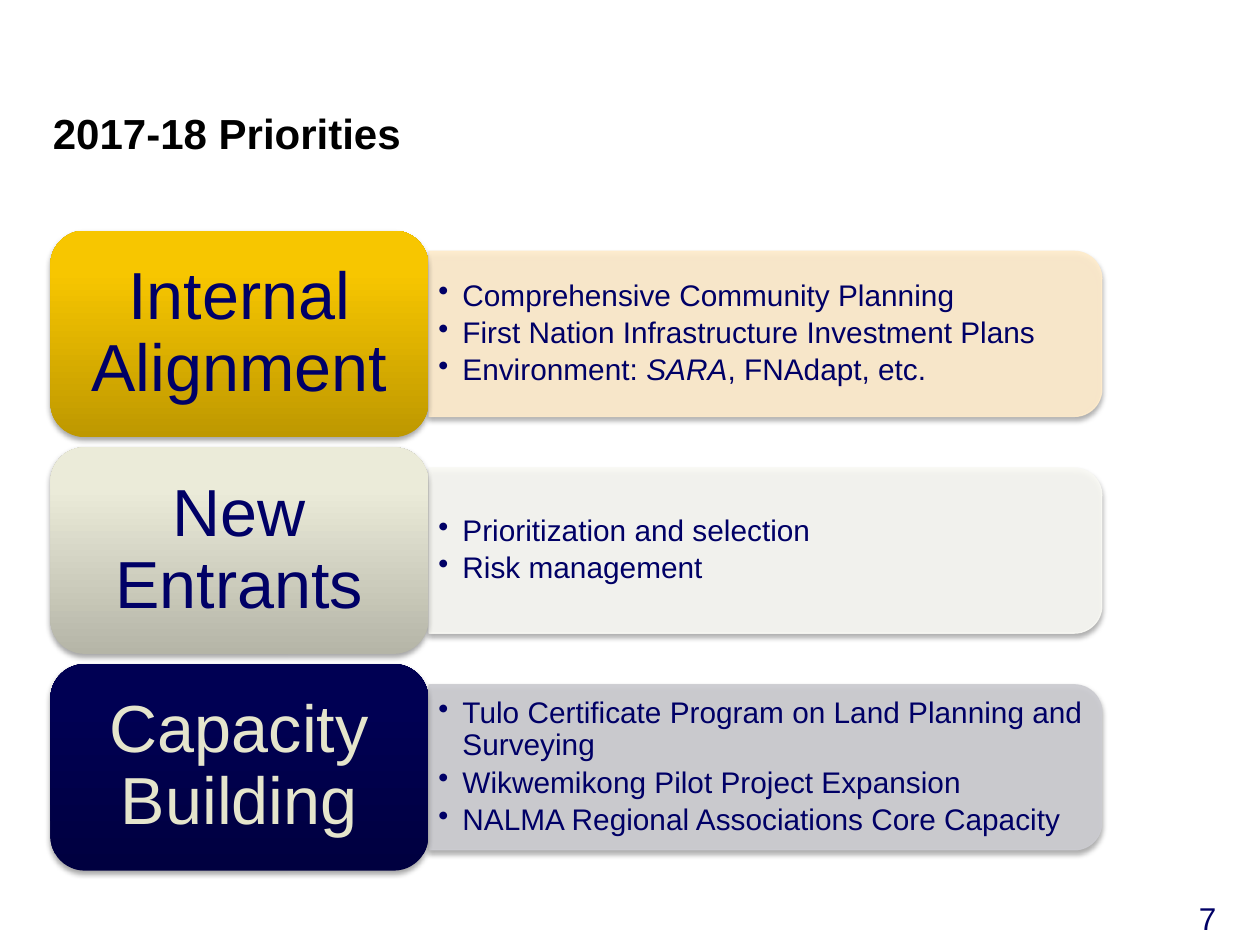
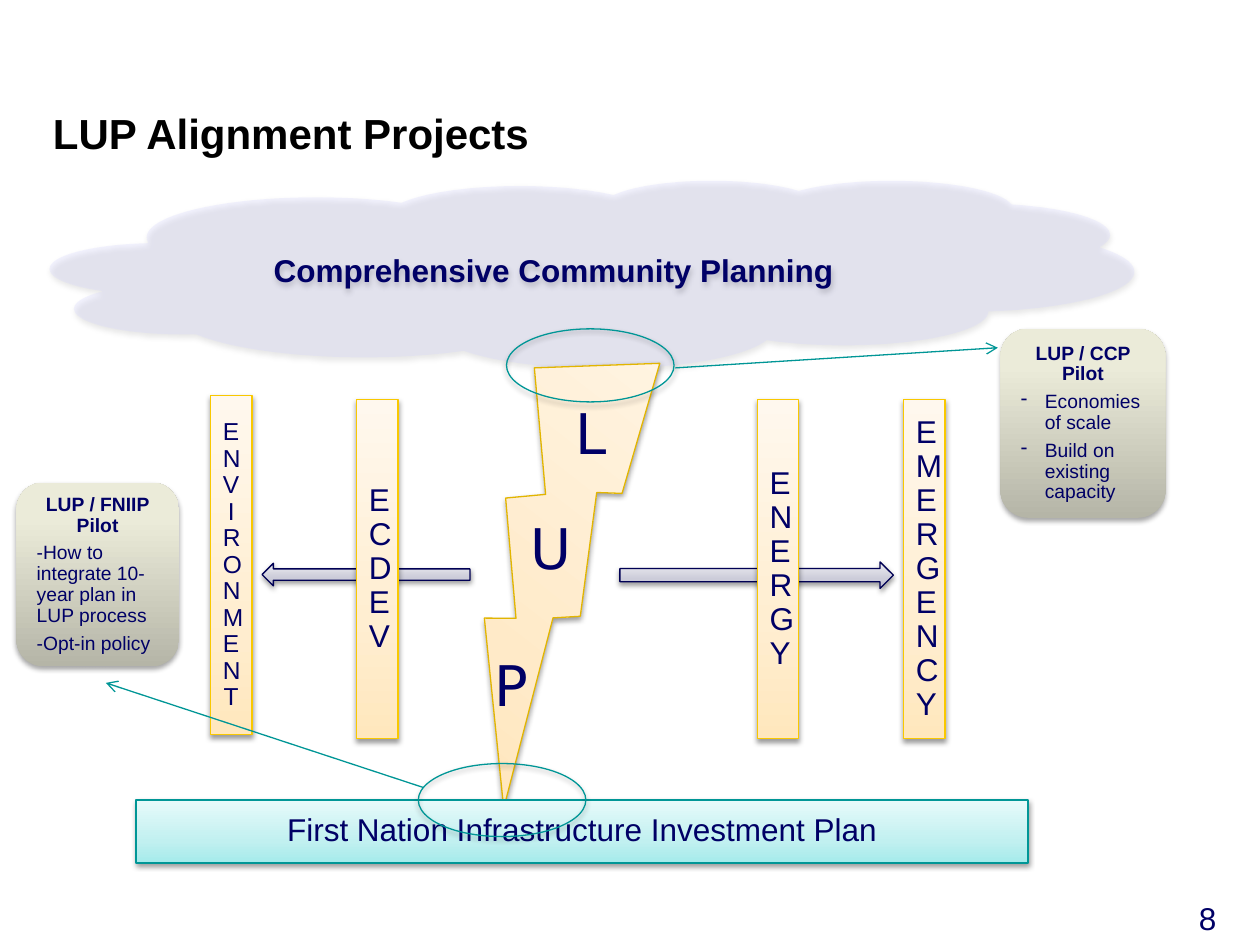
import pptx
import pptx.dml.color
import pptx.enum.shapes
import pptx.enum.text
import pptx.oxml.ns
import pptx.util
import lxml.etree

Inches = pptx.util.Inches
Pt = pptx.util.Pt
Shape = pptx.enum.shapes.MSO_SHAPE
Align = pptx.enum.text.PP_ALIGN
Anchor = pptx.enum.text.MSO_ANCHOR
qn = pptx.oxml.ns.qn

NAVY = "000066"
TEAL = "009696"
SAND = [(0, "B5B5A7"), (80, "EBEBD9"), (100, "ECECDA")]
GOLD = [(0, "BE9800"), (80, "F7C600"), (100, "F8C700")]
MIDNIGHT = [(0, "000040"), (80, "000053"), (100, "000054")]
LAVENDER = [(0, "B6B6CA"), (35, "CCCCD9"), (100, "ECECF1")]
PEACH = [(0, "FFE3B1"), (35, "FFEAC8"), (100, "FFF7EA")]
CREAM = [(0, "FFE7BD"), (35, "FFEED1"), (100, "FFF8EE")]
AQUA = [(0, "A5EBEB"), (35, "C1F0F0"), (100, "E7FAFA")]
SOFT_SHADOW = (35, 1.8)
FIRM_SHADOW = (38, 1.6)


def rgb(value):
    return pptx.dml.color.RGBColor.from_string(value)


def assign(target, values):
    for name, value in values.items():
        setattr(target, name, value)


def add_element(parent, tag, **attributes):
    element = lxml.etree.SubElement(parent, qn(tag))
    for name, value in attributes.items():
        element.set(name, str(value))
    return element


class Builder:
    font = {"name": "Arial", "size": 18, "color": NAVY, "bold": False, "italic": False}

    def __init__(self):
        self.deck = pptx.Presentation()
        assign(self.deck, {"slide_width": Inches(10), "slide_height": Inches(7.5)})
        self.page = None

    def add_page(self, title, number):
        self.page = self.deck.slides.add_slide(self.deck.slide_layouts[5])
        box = self.page.shapes.title
        places = zip(("left", "top", "width", "height"), (0.42, 0.92, 8.58, 0.33))
        assign(box, {name: Inches(value) for name, value in places})
        self.fill_text(box, [title], {"size": 24, "color": "000000", "bold": True},
                       {"line_spacing": Pt(24), "alignment": Align.LEFT}, insets=(0, 0))
        self.text((9.17, 7.12, 0.83, 0.33), [str(number)], {},
                  {"alignment": Align.CENTER}, anchor=Anchor.TOP)

    def fill_text(self, box, lines, font=None, layout=None, anchor=Anchor.MIDDLE,
                  insets=(0.1, 0.05)):
        frame = box.text_frame
        across, down = map(Inches, insets)
        assign(frame, {"word_wrap": True, "auto_size": pptx.enum.text.MSO_AUTO_SIZE.NONE,
                       "vertical_anchor": anchor, "margin_left": across,
                       "margin_right": across, "margin_top": down, "margin_bottom": down})
        for index, line in enumerate(lines):
            para = frame.add_paragraph() if index else frame.paragraphs[0]
            if isinstance(line, str):
                line = {"spans": [(line, {})]}
            if "bullet" in line:
                properties = para._p.get_or_add_pPr()
                properties.set("marL", str(Inches(0.19)))
                properties.set("indent", str(-Inches(0.19)))
                add_element(properties, "a:buChar", char=line["bullet"])
            assign(para, {"line_spacing": 0.9, "space_before": Pt(0),
                          "alignment": Align.LEFT, **(layout or {}), **line.get("layout", {})})
            for text, change in line["spans"]:
                span = para.add_run()
                span.text = text
                values = {**self.font, **(font or {}), **change}
                span.font.color.rgb = rgb(values.pop("color"))
                values["size"] = Pt(values["size"])
                assign(span.font, values)

    def text(self, place, lines, font=None, layout=None, **frame):
        box = self.page.shapes.add_textbox(*map(Inches, place))
        self.fill_text(box, lines, font, layout, **frame)

    def shape(self, kind, place, fill=None, line=None, shadow=SOFT_SHADOW, alpha=None, turn=0):
        box = self.page.shapes.add_shape(kind, *map(Inches, place))
        box.rotation = turn
        properties = box._element.spPr
        if fill is None:
            box.fill.background()
        elif isinstance(fill, str):
            box.fill.solid()
            box.fill.fore_color.rgb = rgb(fill)
        else:
            box.fill.gradient()
            box.fill.gradient_angle = 90
            stops = properties.find(".//" + qn("a:gsLst"))
            for stop in list(stops):
                stops.remove(stop)
            for position, color in fill:
                stop = add_element(stops, "a:gs", pos=position * 1000)
                add_element(stop, "a:srgbClr", val=color)
        if line:
            box.line.color.rgb = rgb(line)
            box.line.width = Pt(0.75)
        else:
            box.line.fill.background()
        if alpha:
            for color in list(properties.iter(qn("a:srgbClr"))):
                add_element(color, "a:alpha", val=alpha * 1000)
        box.shadow.inherit = False
        strength, distance = shadow
        outer = add_element(properties.find(qn("a:effectLst")), "a:outerShdw",
                            blurRad=Pt(3.1), dist=Pt(distance), dir=5400000, rotWithShape=0)
        black = add_element(outer, "a:srgbClr", val="000000")
        add_element(black, "a:alpha", val=strength * 1000)
        return box

    def arrow(self, *ends):
        line = self.page.shapes.add_connector(
            pptx.enum.shapes.MSO_CONNECTOR.STRAIGHT, *map(Inches, ends))
        line.line.color.rgb = rgb(TEAL)
        line.line.width = Pt(0.75)
        properties = line._element.spPr
        add_element(properties.find(qn("a:ln")), "a:tailEnd", type="arrow")
        add_element(properties, "a:effectLst")


def bullet(*spans, mark="•"):
    return {"bullet": mark, "spans": [span if isinstance(span, tuple) else (span, {})
                                      for span in spans]}


def build_priorities(builder):
    builder.add_page("2017-18 Priorities", 7)
    rows = [
        ("Internal Alignment", GOLD, NAVY, "FFECCC",
         [bullet("Comprehensive Community Planning"),
          bullet("First Nation Infrastructure Investment Plans"),
          bullet("Environment: ", ("SARA", {"italic": True}), ", FNAdapt, etc.")]),
        ("New Entrants", SAND, NAVY, "F9F9F4",
         [bullet("Prioritization and selection"), bullet("Risk management")]),
        ("Capacity Building", MIDNIGHT, "E5E5CC", "CCCCD1",
         [bullet("Tulo Certificate Program on Land Planning and Surveying"),
          bullet("Wikwemikong Pilot Project Expansion"),
          bullet("NALMA Regional Associations Core Capacity")]),
    ]
    for index, (heading, fill, color, panel, items) in enumerate(rows):
        top = 1.83 + 1.72 * index
        builder.shape(Shape.ROUND_2_SAME_RECTANGLE, (5.42, top - 1.85, 1.31, 5.34),
                      panel, panel, alpha=90, turn=90)
        builder.text((3.41, top + 0.23, 5.28, 1.18), items, {"size": 17},
                     {"space_after": Pt(3)}, insets=(0.07, 0.04))
        label = builder.shape(Shape.ROUNDED_RECTANGLE, (0.4, top, 3, 1.64), fill)
        builder.fill_text(label, [heading], {"size": 38, "color": color},
                          {"alignment": Align.CENTER}, insets=(0.16, 0.08))


def build_alignment(builder):
    centred = {"alignment": Align.CENTER}
    builder.add_page("LUP Alignment Projects", 8)
    for kind, place in [(Shape.LEFT_ARROW, (2.08, 4.47, 1.65, 0.18)),
                        (Shape.RIGHT_ARROW, (4.92, 4.46, 2.17, 0.21))]:
        builder.shape(kind, place, LAVENDER, "000054", FIRM_SHADOW)

    cloud = builder.shape(Shape.CLOUD_CALLOUT, (0.4, 1.43, 8.6, 1.49), "D5D5FF", alpha=27)
    cloud.adjustments[0] = 0.0
    cloud.adjustments[1] = 0.78
    builder.fill_text(cloud, ["Comprehensive Community Planning"], {"bold": True},
                      {**centred, "line_spacing": 1.0}, insets=(0, 0))

    builder.shape(Shape.LIGHTNING_BOLT, (3.34, 2.64, 1.95, 3.55), PEACH, "E2B500",
                  FIRM_SHADOW, turn=37.8)
    for letter, left, top in [("L", 4.47, 3.17), ("U", 4.11, 4.09), ("P", 3.83, 5.17)]:
        builder.text((left, top, 0.6, 0.59), [letter], {"name": "DejaVu Sans", "size": 32},
                     anchor=Anchor.TOP)

    plan = builder.shape(Shape.RECTANGLE, (1.08, 6.35, 7.08, 0.5), AQUA, TEAL, FIRM_SHADOW)
    builder.fill_text(plan, ["First Nation Infrastructure Investment Plan"], {}, centred)

    pillars = [("ECDEV", 2.83, 3.17, 18), ("ENVIRONMENT", 1.67, 3.14, 14),
               ("ENERGY", 6.01, 3.17, 18), ("EMERGENCY", 7.17, 3.17, 18)]
    for word, left, top, size in pillars:
        pillar = builder.shape(Shape.FLOWCHART_PROCESS, (left, top, 0.33, 2.69),
                               CREAM, "F9C800", FIRM_SHADOW)
        builder.fill_text(pillar, [word], {"size": size}, centred)

    for left, top in [(4.02, 2.61), (3.32, 6.06)]:
        builder.shape(Shape.OVAL, (left, top, 1.33, 0.58), line=TEAL)
    builder.arrow(3.36, 6.25, 0.84, 5.42)
    builder.arrow(5.36, 2.92, 7.92, 2.76)

    pilots = [
        ("LUP / FNIIP Pilot", (0.13, 3.83, 1.29, 1.46),
         ["-How to integrate 10-year plan in LUP process", "-Opt-in policy"]),
        ("LUP / CCP Pilot", (7.94, 2.61, 1.31, 1.5),
         [bullet("Economies of scale", mark="-"),
          bullet("Build on existing capacity", mark="-")]),
    ]
    for heading, place, items in pilots:
        pilot = builder.shape(Shape.ROUNDED_RECTANGLE, place, SAND)
        title = {"spans": [(heading, {"bold": True})], "layout": centred}
        builder.fill_text(pilot, [title, *items], {"size": 11}, {"space_after": Pt(4)})


def main():
    builder = Builder()
    build_priorities(builder)
    build_alignment(builder)
    builder.deck.save("out.pptx")


if __name__ == "__main__":
    main()
